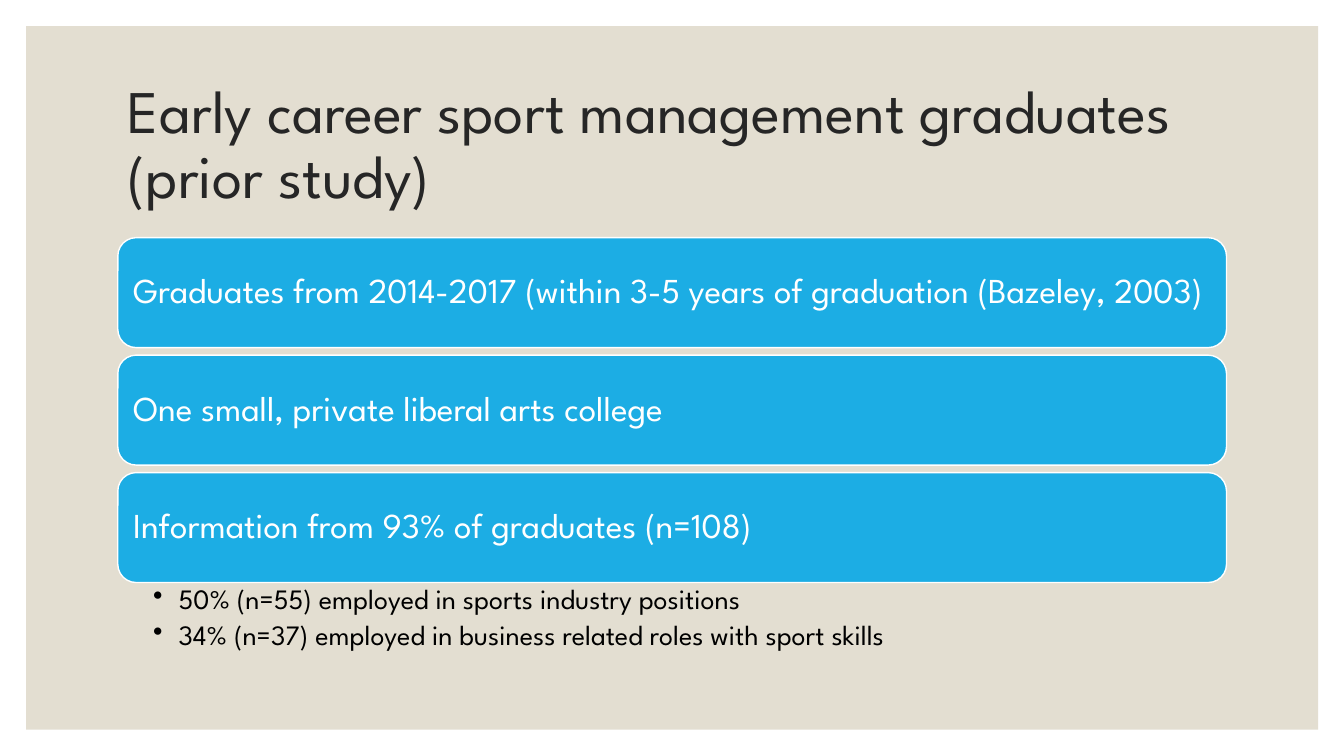
from dataclasses import dataclass

from pptx import Presentation
from pptx.dml.color import RGBColor
from pptx.enum.shapes import MSO_SHAPE as Shape
from pptx.enum.text import MSO_ANCHOR as Anchor, PP_ALIGN as Align
from pptx.oxml.ns import qn
from pptx.util import Cm, Pt


@dataclass(frozen=True)
class Theme:
    font: str = "League Spartan"
    panel: str = "E3DED1"
    bar: str = "1CADE4"
    white: str = "FFFFFF"
    title: str = "262626"
    black: str = "000000"
    title_size: float = 43.2
    bar_size: float = 25
    bullet_size: float = 20


@dataclass(frozen=True)
class Box:
    left: float
    top: float
    width: float
    height: float

    def lengths(self) -> tuple:
        return Cm(self.left), Cm(self.top), Cm(self.width), Cm(self.height)


THEME = Theme()
LEFT, WIDTH = 2.97, 27.94
BAR_TOP, BAR_HEIGHT, BAR_PITCH = 5.99, 2.77, 2.96
BARS = [
    "Graduates from 2014-2017 (within 3-5 years of graduation (Bazeley, 2003)",
    "One small, private liberal arts college",
    "Information from 93% of graduates (n=108)",
]
BULLETS = [
    "50% (n=55) employed in sports industry positions",
    "34% (n=37) employed in business related roles with sport skills",
]


def add_bullet(p) -> None:
    pPr = p._p.get_or_add_pPr()
    pPr.set("marL", str(Cm(0.64)))
    pPr.set("indent", str(-Cm(0.64)))
    pPr.append(pPr.makeelement(qn("a:buChar"), {"char": "•"}))


def write(sp, lines: list[str], *, size: float, color: str,
          insets: tuple = (0.25, 0.13, 0.25, 0.13), anchor=Anchor.MIDDLE,
          space_after: float = 0, bullets: bool = False) -> None:
    """Fill a shape with paragraphs; insets are left, top, right, bottom in cm."""
    tf = sp.text_frame
    tf.word_wrap = True
    tf.vertical_anchor = anchor
    tf.margin_left, tf.margin_top, tf.margin_right, tf.margin_bottom = map(Cm, insets)
    for i, line in enumerate(lines):
        p = tf.add_paragraph() if i else tf.paragraphs[0]
        p.alignment = Align.LEFT
        p.line_spacing = 0.9
        p.space_after = Pt(space_after)
        if bullets:
            add_bullet(p)
        r = p.add_run()
        r.text = line
        r.font.name = THEME.font
        r.font.size = Pt(size)
        r.font.color.rgb = RGBColor.from_string(color)


def add_block(s, kind, box: Box, fill: str, line: str | None = None):
    sp = s.shapes.add_shape(kind, *box.lengths())
    sp.shadow.inherit = False
    sp.fill.solid()
    sp.fill.fore_color.rgb = RGBColor.from_string(fill)
    if line:
        sp.line.color.rgb = RGBColor.from_string(line)
        sp.line.width = Pt(1)
    else:
        sp.line.fill.background()
    return sp


def main() -> None:
    prs = Presentation()
    prs.slide_width, prs.slide_height = Cm(33.87), Cm(19.05)
    s = prs.slides.add_slide(prs.slide_layouts[6])
    s.background.fill.solid()
    s.background.fill.fore_color.rgb = RGBColor.from_string(THEME.white)

    add_block(s, Shape.RECTANGLE, Box(0.66, 0.66, 32.56, 17.73), THEME.panel)
    title = s.shapes.add_textbox(*Box(LEFT, 1.78, WIDTH, 3.81).lengths())
    write(title, ["Early career sport management graduates (prior study)"],
          size=THEME.title_size, color=THEME.title)

    for i, text in enumerate(BARS):
        box = Box(LEFT, BAR_TOP + i * BAR_PITCH, WIDTH, BAR_HEIGHT)
        bar = add_block(s, Shape.ROUNDED_RECTANGLE, box, THEME.bar, THEME.white)
        write(bar, [text], size=THEME.bar_size, color=THEME.white,
              insets=(0.25, 0.25, 0.25, 0.25))

    details = s.shapes.add_textbox(*Box(LEFT, 14.68, WIDTH, 1.93).lengths())
    write(details, BULLETS, size=THEME.bullet_size, color=THEME.black,
          insets=(0.89, 0.08, 0.48, 0.08), anchor=Anchor.TOP,
          space_after=4, bullets=True)

    prs.save("out.pptx")


if __name__ == "__main__":
    main()
